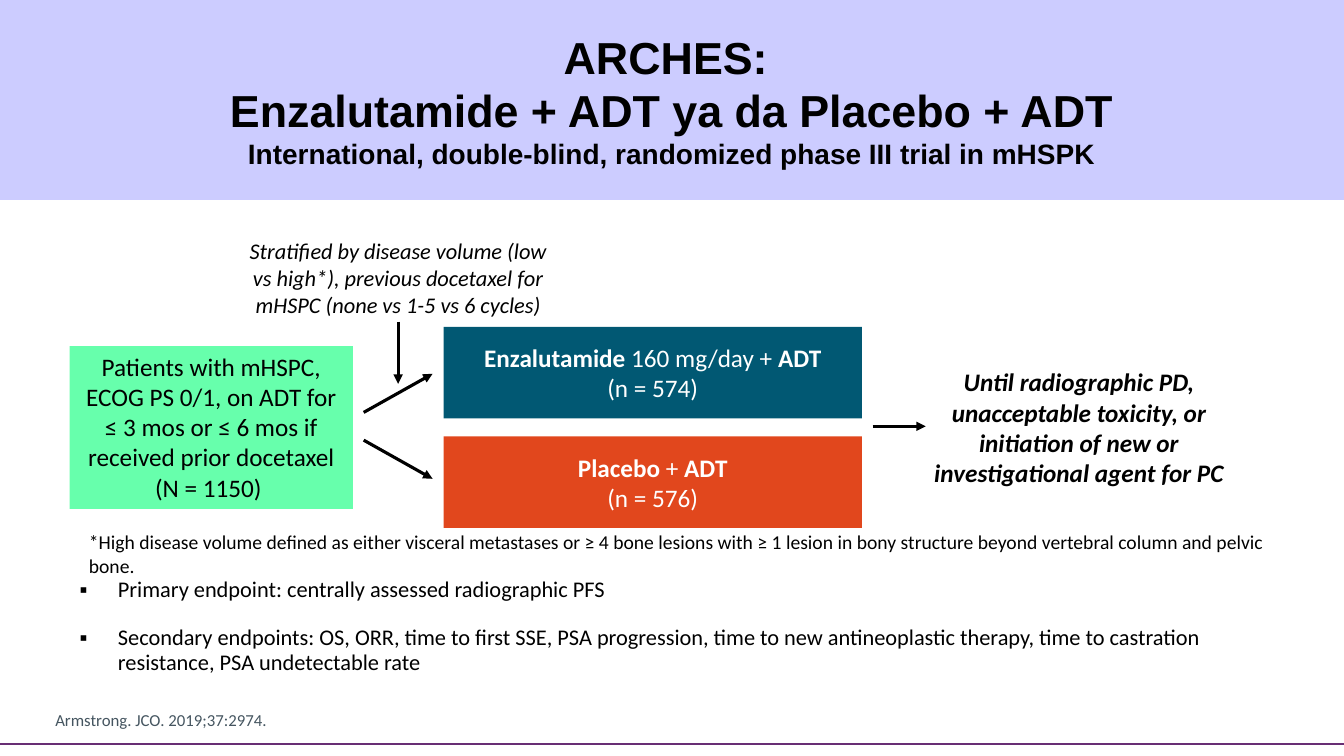
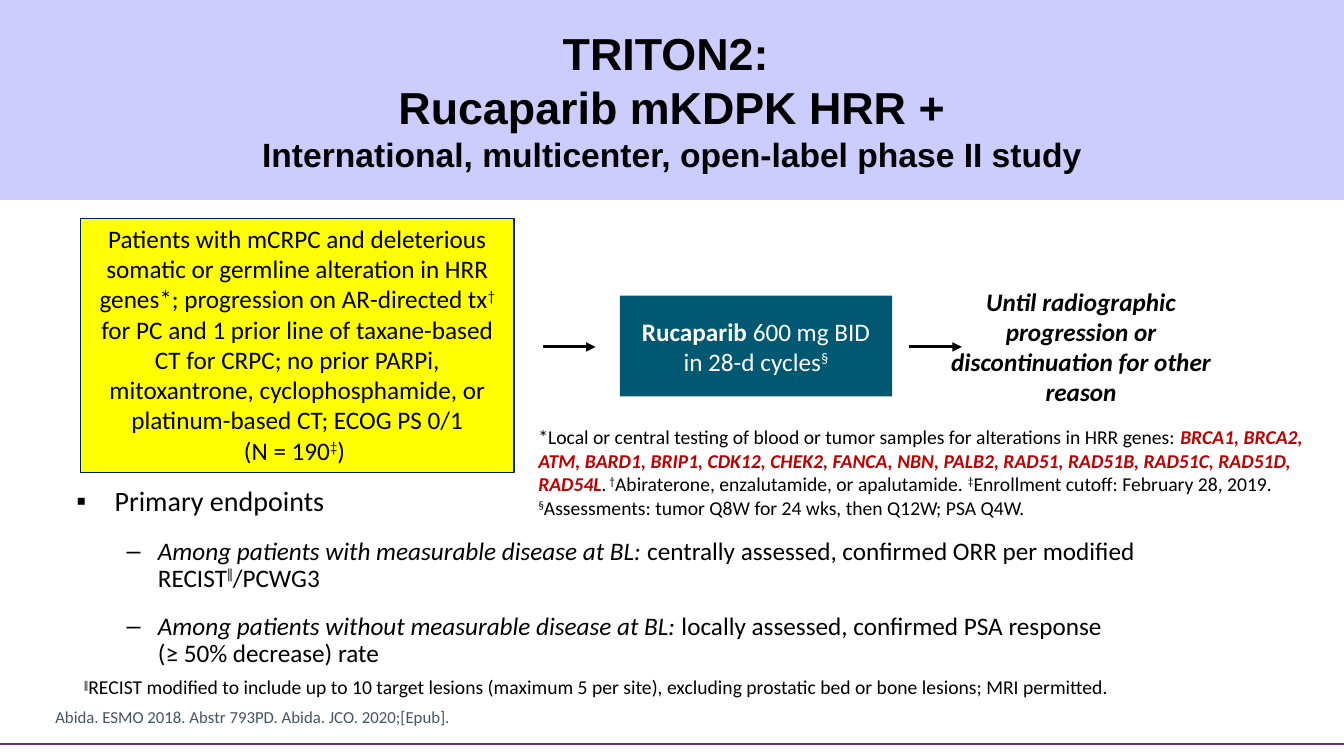
from lxml import etree
from pptx import Presentation
from pptx import util as u
from pptx.dml.color import RGBColor
from pptx.enum import shapes, text
from pptx.oxml.ns import qn

WIDTH, HEIGHT = u.Inches(13.333), u.Inches(7.5)
COLS, ROWS = 160, 90
BLACK, WHITE, RED = "000000", "FFFFFF", "C00000"
BAND, RULE, SOURCE = "CCCCFF", "682E74", "455560"
TEAL, ORANGE, GREEN, YELLOW, NAVY = "015873", "E1471D", "67FFAC", "FFFF00", "002060"
ANCHORS = {"t": text.MSO_ANCHOR.TOP, "m": text.MSO_ANCHOR.MIDDLE, "b": text.MSO_ANCHOR.BOTTOM}


def rgb(value):
    """Turn a hex string into a colour."""
    return RGBColor.from_string(value)


def cols(n):
    """Length of n grid columns."""
    return u.Emu(round(WIDTH * n / COLS))


def rows(n):
    """Length of n grid rows."""
    return u.Emu(round(HEIGHT * n / ROWS))


def place(x, y, w, h):
    """Grid position and size as slide lengths."""
    return cols(x), rows(y), cols(w), rows(h)


def apply(target, values):
    """Set every attribute named in a dict."""
    for name, value in values.items():
        setattr(target, name, value)


def add_run(p, content, flags="", size=18, color=BLACK, face="Calibri"):
    """Add a run; flags are b bold, i italic, ^ superscript, r red."""
    for n, line in enumerate(content.split("\n")):
        if n:
            p.add_line_break()
        r = p.add_run()
        r.text = line
        apply(r.font, {"name": face, "size": u.Pt(size), "bold": "b" in flags, "italic": "i" in flags})
        r.font.color.rgb = rgb(RED if "r" in flags else color)
        if "^" in flags:
            r.font._element.set("baseline", "30000")


def write(sp, paragraphs, anchor="t", align="c", **style):
    """Fill a shape with paragraphs, each a string or a list of (text, flags)."""
    tf = sp.text_frame
    apply(tf, {"word_wrap": True, "vertical_anchor": ANCHORS[anchor]})
    for n, runs in enumerate(paragraphs):
        p = tf.add_paragraph() if n else tf.paragraphs[0]
        p.alignment = text.PP_ALIGN.CENTER if align == "c" else text.PP_ALIGN.LEFT
        for content, flags in [(runs, "")] if isinstance(runs, str) else runs:
            add_run(p, content, flags, **style)
    return tf


def add_box(s, at, fill, paragraphs=(), anchor="m", line=None, **style):
    """Add a filled rectangle with centred text."""
    sp = s.shapes.add_shape(shapes.MSO_SHAPE.RECTANGLE, *place(*at))
    sp.shadow.inherit = False
    sp.fill.solid()
    sp.fill.fore_color.rgb = rgb(fill)
    if line:
        sp.line.color.rgb = rgb(line)
        sp.line.width = u.Pt(0.75)
    else:
        sp.line.fill.background()
    return write(sp, paragraphs, anchor, **style)


def add_label(s, at, paragraphs, anchor="t", align="l", **style):
    """Add a plain text box."""
    return write(s.shapes.add_textbox(*place(*at)), paragraphs, anchor, align, **style)


def add_line(s, x1, y1, x2, y2, color=BLACK, width=2.25, head=True):
    """Add a straight line, with an arrowhead at its end if wanted."""
    c = s.shapes.add_connector(shapes.MSO_CONNECTOR.STRAIGHT, cols(x1), rows(y1), cols(x2), rows(y2))
    c.line.color.rgb = rgb(color)
    c.line.width = u.Pt(width)
    if head:
        etree.SubElement(c.line._get_or_add_ln(), qn("a:tailEnd"), type="triangle")
    etree.SubElement(c._element.spPr, qn("a:effectLst"))


def add_bullets(s, at, items, after):
    """Add a bulleted list of (level, size, runs)."""
    tf = add_label(s, at, [])
    for n, (level, size, runs) in enumerate(items):
        p = tf.add_paragraph() if n else tf.paragraphs[0]
        mark, margin, hang = [("▪", 0.38, 0.38), ("‒", 0.81, 0.31)][level]
        pPr = p._p.get_or_add_pPr()
        pPr.set("marL", str(u.Inches(margin)))
        pPr.set("indent", str(-u.Inches(hang)))
        etree.SubElement(etree.SubElement(pPr, qn("a:buClr")), qn("a:srgbClr"), val=BLACK)
        etree.SubElement(pPr, qn("a:buFont"), typeface="Arial")
        etree.SubElement(pPr, qn("a:buChar"), char=mark)
        apply(p, {"level": level, "line_spacing": 0.9, "space_before": u.Pt(10 if n else 0),
                  "space_after": u.Pt(after)})
        for content, flags in runs:
            add_run(p, content, flags, size)


def add_frame(prs, titles, subtitle, subtitle_size, source, source_top):
    """Add a slide with the shared title band, bottom rule and source line."""
    s = prs.slides.add_slide(prs.slide_layouts[6])
    add_line(s, 0, 88.6, COLS, 88.6, RULE, 1.5, head=False)
    tf = add_box(s, (0, 0, COLS, 23.8), BAND, [[(t, "b")] for t in titles], size=32, face="Arial")
    p = tf.add_paragraph()
    p.alignment = text.PP_ALIGN.CENTER
    add_run(p, subtitle, "b", subtitle_size, face="Arial")
    add_label(s, (5.4, source_top, 103, 3.6), [source], "b", size=12, color=SOURCE)
    return s


def add_arches(prs):
    """Two-arm trial design."""
    s = add_frame(prs, ["ARCHES: ", "Enzalutamide + ADT ya da Placebo + ADT"],
                  "International, double-blind, randomized phase III trial in mHSPK", 20,
                  "Armstrong. JCO. 2019;37:2974.", 83.9)
    add_box(s, (8.3, 41.2, 33.7, 19.4), GREEN,
            ["Patients with mHSPC, ECOG PS 0/1, on ADT for ≤ 3 mos or ≤ 6 mos if received prior docetaxel",
             "(N = 1150) "], "t")
    arms = [(TEAL, [("Enzalutamide", "b"), (" 160 mg/day + ", ""), ("ADT", "b")], "(n = 574)"),
            (ORANGE, [("Placebo ", "b"), ("+ ", ""), ("ADT", "b")], "(n = 576)")]
    middle = 50.75
    for n, (fill, drug, count) in enumerate(arms):
        add_box(s, (52.8, 38.9 + 13.05 * n, 49.8, 10.9), fill, [drug, count], color=WHITE)
        side = 2 * n - 1
        add_line(s, 43.3, middle + 1.65 * side, 51.5, middle + 6.25 * side)
    add_line(s, 103.9, middle, 110.2, middle)
    add_line(s, 47.4, 38.3, 47.4, 45.7)
    add_label(s, (28, 27.6, 38.8, 10.9),
              [[("Stratified by disease volume (low vs high*), previous docetaxel for mHSPC "
                 "(none vs 1-5 vs 6 cycles)", "i")]], "m", "c", size=16)
    add_label(s, (109.8, 43, 37.3, 15.7),
              [[("Until radiographic PD, unacceptable toxicity, or initiation of new or "
                 "investigational agent for PC", "bi")]], "m", "c")
    add_label(s, (9.4, 62.5, 145.3, 6.8),
              ["*High disease volume defined as either visceral metastases or ≥ 4 bone lesions with "
               "≥ 1 lesion in bony structure beyond vertebral column and pelvic bone."], size=14)
    add_bullets(s, (8.3, 68.3, 142.8, 15.4), [
        (0, 16, [("Primary endpoint: centrally assessed radiographic PFS", "")]),
        (0, 16, [("Secondary endpoints: OS, ORR, time to first SSE, PSA progression, time to new "
                  "antineoplastic therapy, time to castration resistance, PSA undetectable rate", "")]),
    ], after=7)


def add_triton(prs):
    """Single-arm trial design."""
    s = add_frame(prs, ["TRITON2: ", "Rucaparib mKDPK HRR +"],
                  "International, multicenter, open-label phase II study", 24,
                  "Abida. ESMO 2018. Abstr 793PD. Abida. JCO. 2020;[Epub].", 83.5)
    add_box(s, (9.6, 26, 51.6, 30.3), YELLOW, [
        [("Patients with mCRPC and deleterious somatic or germline alteration in HRR genes*; "
          "progression on AR-directed tx", ""), ("† ", "^"),
         ("for PC and 1 prior line of taxane-based CT for CRPC; no prior PARPi, mitoxantrone, "
          "cyclophosphamide, or platinum-based CT; ECOG PS 0/1", "")],
        [("(N = 190", ""), ("‡", "^"), (") ", "")]], "t", line=NAVY)
    add_box(s, (73.8, 35.2, 32.4, 12), TEAL,
            [[("Rucaparib", "b"), (" 600 mg BID in 28-d cycles", ""), ("§", "^")]], color=WHITE)
    for x in (64.6, 108.2):
        add_line(s, x, 41.3, x + 6.3, 41.3)
    add_label(s, (112, 33.4, 33.4, 15.7),
              [[("Until radiographic progression or discontinuation for other reason", "bi")]], "m", "c")
    add_label(s, (62.9, 50, 94.2, 12.5), [[
        ("*Local or central testing of blood or tumor samples for alterations in HRR genes: ", ""),
        ("BRCA1, BRCA2, ATM, BARD1, BRIP1, CDK12, CHEK2, FANCA, NBN, PALB2, RAD51, RAD51B, "
         "RAD51C, RAD51D, RAD54L", "bir"),
        (".", "i"), (" †", "^"), ("Abiraterone, enzalutamide, or apalutamide. ", ""),
        ("‡", "^"), ("Enrollment cutoff: February 28, 2019. ", ""),
        ("§", "^"), ("Assessments: tumor Q8W for 24 wks, then Q12W; PSA Q4W.", "")]], size=14)
    add_bullets(s, (7.9, 57.4, 142.8, 22.2), [
        (0, 20, [("Primary endpoints", "")]),
        (1, 18, [("Among patients with measurable disease at BL: ", "i"),
                 ("centrally assessed, confirmed ORR per modified RECIST", ""),
                 ("ǁ", "^"), ("/PCWG3", "")]),
        (1, 18, [("Among patients without measurable disease at BL:", "i"),
                 (" locally assessed, confirmed PSA response \n(≥ 50% decrease) rate", "")]),
    ], after=5)
    add_label(s, (8.8, 79.8, 145.3, 4), [[
        ("ǁ", "^"),
        ("RECIST modified to include up to 10 target lesions (maximum 5 per site), excluding "
         "prostatic bed or bone lesions; MRI permitted.", "")]], size=14)


def main():
    """Build and save the deck."""
    prs = Presentation()
    apply(prs, {"slide_width": WIDTH, "slide_height": HEIGHT})
    add_arches(prs)
    add_triton(prs)
    prs.save("out.pptx")


if __name__ == "__main__":
    main()
